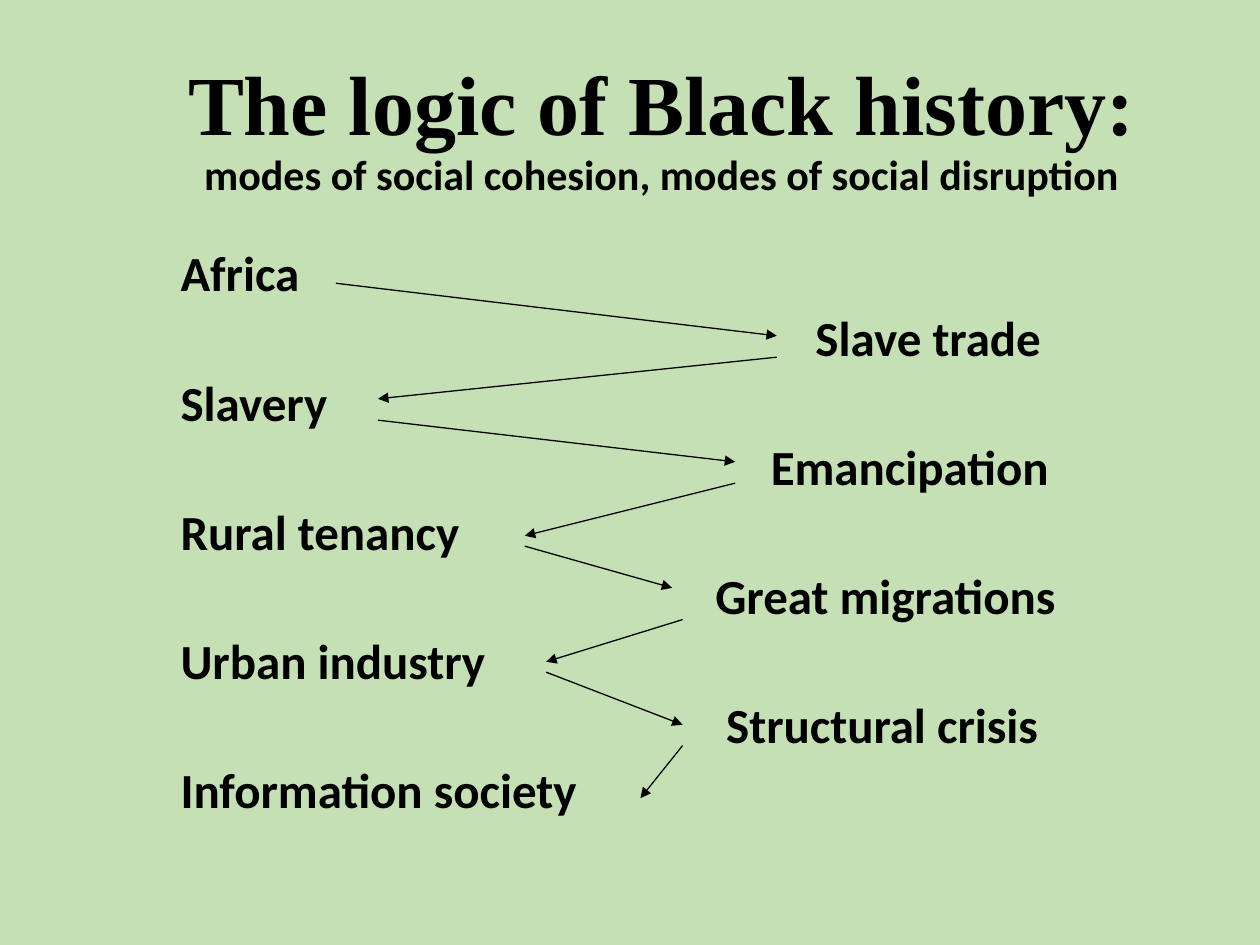
from lxml.etree import SubElement
from pptx import Presentation
from pptx.dml.color import RGBColor
from pptx.enum.shapes import MSO_CONNECTOR
from pptx.enum.text import MSO_ANCHOR, PP_ALIGN
from pptx.oxml.ns import qn
from pptx.util import Cm, Pt

COLORS = {"background": "C5E0B4", "ink": "000000"}

STAGES = [
    ("Africa", 0),
    ("Slave trade", 12.8),
    ("Slavery", 0),
    ("Emancipation", 11.9),
    ("Rural tenancy", 0),
    ("Great migrations", 10.78),
    ("Urban industry", 0),
    ("Structural crisis", 11),
    ("Information society", 0),
]

ARROWS = [
    ((6.77, 5.71), (15.66, 6.77)),
    ((15.66, 7.2), (7.62, 8.04)),
    ((7.62, 8.47), (14.82, 9.31)),
    ((14.82, 9.74), (10.58, 10.8)),
    ((10.58, 11.01), (13.55, 11.85)),
    ((13.76, 12.49), (11.01, 13.34)),
    ((11.01, 13.55), (13.76, 14.61)),
    ((13.76, 15.03), (12.91, 16.09)),
]


def write(paragraph, text, font="Calibri", size=28, spacing=0.8, before=0,
          indent=0, align=PP_ALIGN.LEFT):
    paragraph.alignment = align
    paragraph.line_spacing = spacing
    paragraph.space_before = Pt(before)
    if indent:
        paragraph._p.get_or_add_pPr().set("marL", str(Cm(indent)))
    run = paragraph.add_run()
    run.text = text
    run.font.name = font
    run.font.size = Pt(size)
    run.font.bold = True
    run.font.color.rgb = RGBColor.from_string(COLORS["ink"])


class HistorySlide:
    def __init__(self, presentation):
        self.slide = presentation.slides.add_slide(presentation.slide_layouts[6])
        fill = self.slide.background.fill
        fill.solid()
        fill.fore_color.rgb = RGBColor.from_string(COLORS["background"])

    def text_box(self, left, top, width, height, lines, anchor=MSO_ANCHOR.TOP):
        shape = self.slide.shapes.add_textbox(Cm(left), Cm(top), Cm(width), Cm(height))
        frame = shape.text_frame
        frame.word_wrap = True
        frame.vertical_anchor = anchor
        for index, (text, style) in enumerate(lines):
            paragraph = frame.add_paragraph() if index else frame.paragraphs[0]
            write(paragraph, text, **style)

    def arrow(self, start, end):
        connector = self.slide.shapes.add_connector(
            MSO_CONNECTOR.STRAIGHT, *map(Cm, start + end))
        connector.line.width = Pt(0.75)
        connector.line.color.rgb = RGBColor.from_string(COLORS["ink"])
        SubElement(connector.line._get_or_add_ln(), qn("a:tailEnd"), type="triangle")
        SubElement(connector._element.spPr, qn("a:effectLst"))


def main():
    presentation = Presentation()
    presentation.slide_width = Cm(25.4)
    presentation.slide_height = Cm(19.05)
    history = HistorySlide(presentation)

    stage_lines = [
        (text, {"indent": indent, "before": 10 if index else 0})
        for index, (text, indent) in enumerate(STAGES)
    ]
    history.text_box(3.39, 5, 19.48, 12.57, stage_lines)

    heading = {"spacing": 0.9, "align": PP_ALIGN.CENTER}
    title_lines = [
        ("The logic of Black history:",
         {"font": "Times New Roman", "size": 48, **heading}),
        ("modes of social cohesion, modes of social disruption",
         {"size": 24, **heading}),
    ]
    history.text_box(0.64, 1.06, 25.4, 3.18, title_lines, anchor=MSO_ANCHOR.MIDDLE)

    for start, end in ARROWS:
        history.arrow(start, end)

    presentation.save("out.pptx")


if __name__ == "__main__":
    main()
